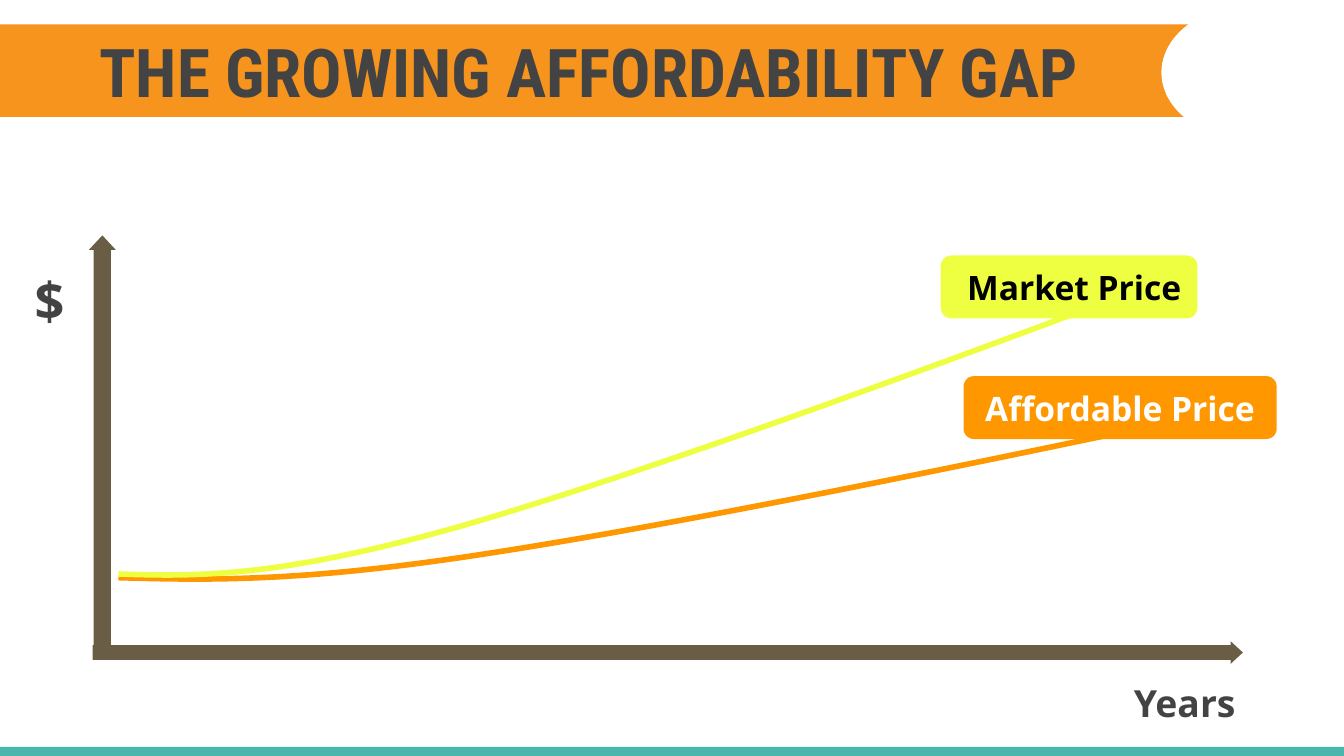
import pptx
import pptx.util
import pptx.dml.color
import pptx.enum.shapes
import pptx.enum.text
import pptx.oxml.ns
from lxml import etree

Cm, Pt = pptx.util.Cm, pptx.util.Pt
Kind = pptx.enum.shapes.MSO_SHAPE
Align = pptx.enum.text.PP_ALIGN
Anchor = pptx.enum.text.MSO_ANCHOR
qn = pptx.oxml.ns.qn

THEME = {
    "head": "Roboto Condensed", "body": "Open Sans",
    "banner": "F7941E", "foot": "4DB6AC", "axis": "695D46",
    "market": "EEFF41", "afford": "FF9800",
    "dark": "434343", "black": "000000", "white": "FFFFFF",
    "title": 36, "unit": 28, "time": 20, "label": 18, "line": 3,
}

# Content: boxes are left, top, width, height in cm
TITLE = ("THE GROWING AFFORDABILITY GAP", (0.97, 0.48, 20.32, 1.7))
DECOR = [
    (Kind.RECTANGLE, (0, 0.46, 23.32, 1.75), "banner"),
    (Kind.OVAL, (21.95, 0.1, 3.38, 2.54), "white"),
    (Kind.RECTANGLE, (0, 14.12, 25.4, 0.17), "foot"),
]
AXES = [
    (Kind.RIGHT_ARROW, (1.75, 12.12, 21.74, 0.43)),
    (Kind.UP_ARROW, (1.68, 4.45, 0.51, 7.92)),
]
NAMES = [
    ("$", (0.2, 4.95, 1.47, 1.09), "unit", Align.CENTER),
    ("Years", (21.18, 12.73, 2.97, 0.84), "time", Align.LEFT),
]
# Each curve: a start, then three Bezier points per segment
CURVES = [
    ("afford", [(2.24, 10.92), (3.96, 10.97), (5.69, 11), (9.04, 10.49),
                (12.42, 9.98), (17.42, 8.97), (22.4, 7.92)]),
    ("market", [(2.24, 10.85), (3.73, 10.9), (5.23, 10.92), (8.59, 9.98),
                (11.96, 9.02), (17.22, 7.09), (22.45, 5.13)]),
]
# Last value: left inset
LABELS = [
    ("Market Price", (17.78, 4.83, 4.85, 1.19), "market", "black", 0.2),
    ("Affordable Price", (18.21, 7.11, 5.92, 1.19), "afford", "white", 0),
]


def color(name):
    return pptx.dml.color.RGBColor.from_string(THEME[name])


def place(box):
    return [Cm(n) for n in box]


def write(shape, text, face, size, ink, align, wrap=True):
    frame = shape.text_frame
    frame.text = text
    frame.word_wrap = wrap
    para = frame.paragraphs[0]
    para.alignment = align
    font = para.runs[0].font
    font.name, font.size, font.bold = THEME[face], Pt(THEME[size]), True
    font.color.rgb = color(ink)
    return frame


def draw(slide, kind, box, fill):
    shape = slide.shapes.add_shape(kind, *place(box))
    shape.shadow.inherit = False
    shape.fill.solid()
    shape.fill.fore_color.rgb = color(fill)
    shape.line.fill.background()
    return shape


def curve(slide, name, points):
    dots = [(Cm(x), Cm(y)) for x, y in points]
    pen = slide.shapes.build_freeform(*dots[0])
    pen.add_line_segments(dots[1:], close=False)
    shape = pen.convert_to_shape()
    shape.shadow.inherit = False
    shape.fill.background()
    shape.line.color.rgb = color(name)
    shape.line.width = Pt(THEME["line"])
    # Join every three straight steps into one Bezier segment
    trace = next(shape._element.iter(qn("a:path")))
    steps = trace.findall(qn("a:lnTo"))
    for i in range(0, len(steps), 3):
        bend = etree.SubElement(trace, qn("a:cubicBezTo"))
        for step in steps[i:i + 3]:
            bend.append(step[0])
            trace.remove(step)


def main():
    deck = pptx.Presentation()
    deck.slide_width, deck.slide_height = Cm(25.4), Cm(14.29)
    slide = deck.slides.add_slide(deck.slide_layouts[5])

    # Banner and footer
    for kind, box, fill in DECOR:
        draw(slide, kind, box, fill)

    # Title, raised above the banner
    text, box = TITLE
    title = slide.shapes.title
    title.left, title.top, title.width, title.height = place(box)
    frame = write(title, text, "head", "title", "dark", Align.CENTER)
    frame.vertical_anchor = Anchor.MIDDLE
    slide.shapes._spTree.append(title._element)

    # Axes and their names
    for kind, box in AXES:
        arrow = draw(slide, kind, box, "axis")
        arrow.adjustments[0] = 0.64
        arrow.adjustments[1] = 0.54
    for text, box, size, align in NAMES:
        note = slide.shapes.add_textbox(*place(box))
        write(note, text, "body", size, "dark", align)

    # Price curves
    for name, points in CURVES:
        curve(slide, name, points)

    # Curve labels
    for text, box, fill, ink, inset in LABELS:
        tag = draw(slide, Kind.ROUNDED_RECTANGLE, box, fill)
        frame = write(tag, text, "body", "label", ink, Align.CENTER, False)
        frame.vertical_anchor = Anchor.MIDDLE
        frame.margin_left, frame.margin_right = Cm(inset), 0

    deck.save("out.pptx")


if __name__ == "__main__":
    main()
